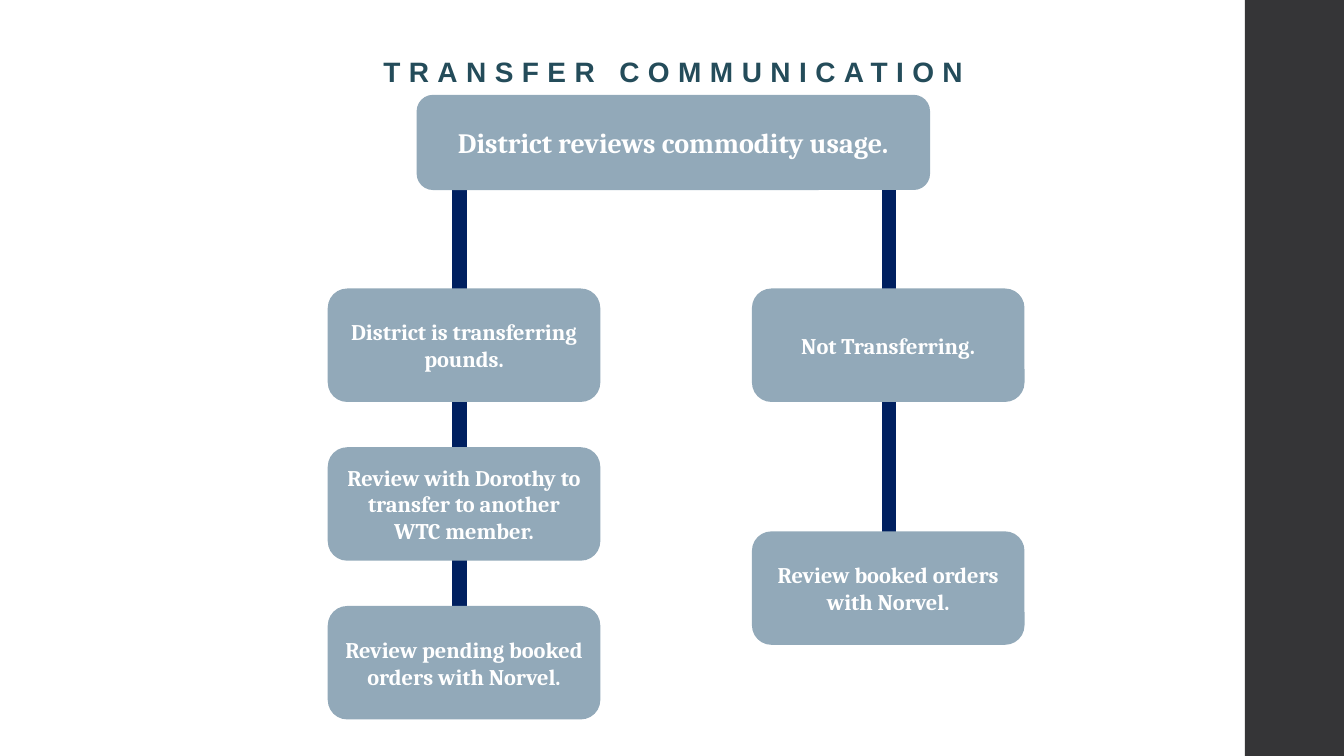
from pptx import Presentation
from pptx.dml.color import RGBColor
from pptx.enum.shapes import MSO_SHAPE
from pptx.enum.text import MSO_ANCHOR, PP_ALIGN
from pptx.util import Cm, Pt

RECTANGLE, ROUNDED = MSO_SHAPE.RECTANGLE, MSO_SHAPE.ROUNDED_RECTANGLE
MIDDLE, BOTTOM = MSO_ANCHOR.MIDDLE, MSO_ANCHOR.BOTTOM
CENTER = PP_ALIGN.CENTER
TITLE_ONLY = 5

COLORS = {
    "sidebar": "353537",
    "bar": "002060",
    "box": "92A9B9",
    "title": "244C5A",
    "label": "FFFFFF",
}
TITLE_FONT = {"name": "Arial", "size": Pt(20), "bold": True}
LABEL_FONT = {"name": "Cambria", "bold": True}

SLIDE_WIDTH, SLIDE_HEIGHT = 33.87, 19.05
BOX_WIDTH, BOX_HEIGHT = 6.83, 2.82
LEFT_COLUMN, RIGHT_COLUMN = 8.28, 18.97
FIRST_ROW, ROW_STEP = 7.29, 4.0

TRANSFER_STEPS = [
    "District is transferring pounds.",
    "Review with Dorothy to transfer to another WTC member.",
    "Review pending booked orders with Norvel.",
]


class FlowPage:
    """Holds the flowchart style and the slide being drawn."""

    def __init__(self, deck):
        self.page = deck.slides.add_slide(deck.slide_layouts[TITLE_ONLY])

    def add_text(self, shape, text, color, font, anchor):
        frame = shape.text_frame
        frame.word_wrap = True
        frame.vertical_anchor = anchor
        para = frame.paragraphs[0]
        para.alignment = CENTER
        span = para.add_run()
        span.text = text
        for key, value in font.items():
            setattr(span.font, key, value)
        span.font.color.rgb = RGBColor.from_string(COLORS[color])
        return para, span

    def title(self, text, left, top, width, height):
        shape = self.page.shapes.title
        place = {"left": left, "top": top, "width": width, "height": height}
        for key, value in place.items():
            setattr(shape, key, Cm(value))
        para, span = self.add_text(shape, text, "title", TITLE_FONT, BOTTOM)
        para.line_spacing = 0.9
        span._r.get_or_add_rPr().set("spc", "600")

    def block(self, kind, color, left, top, width, height, outlined=True):
        shape = self.page.shapes.add_shape(
            kind, Cm(left), Cm(top), Cm(width), Cm(height))
        shape.shadow.inherit = False
        shape.fill.solid()
        shape.fill.fore_color.rgb = RGBColor.from_string(COLORS[color])
        if outlined:
            shape.line.color.rgb = RGBColor.from_string(COLORS[color])
            shape.line.width = Pt(1.1)
        else:
            shape.line.fill.background()
        return shape

    def bar(self, left, top, width, height):
        self.block(RECTANGLE, "bar", left, top, width, height)

    def box(self, text, left, top, width=BOX_WIDTH, height=BOX_HEIGHT, size=16):
        shape = self.block(ROUNDED, "box", left, top, width, height)
        font = {**LABEL_FONT, "size": Pt(size)}
        self.add_text(shape, text, "label", font, MIDDLE)


def main():
    deck = Presentation()
    deck.slide_width, deck.slide_height = Cm(SLIDE_WIDTH), Cm(SLIDE_HEIGHT)
    flow = FlowPage(deck)

    flow.block(RECTANGLE, "sidebar", 31.37, 0, 2.54, SLIDE_HEIGHT, outlined=False)
    flow.title("TRANSFER COMMUNICATION", 2.36, -0.89, 29.21, 3.25)
    flow.bar(11.42, 4.79, 0.33, 10.97)
    flow.bar(22.25, 4.5, 0.3, 9.6)

    flow.box("District reviews commodity usage.", 10.52, 2.41, 12.9, 2.36, size=20)
    for row, step in enumerate(TRANSFER_STEPS):
        flow.box(step, LEFT_COLUMN, FIRST_ROW + row * ROW_STEP)
    flow.box("Not Transferring.", RIGHT_COLUMN, FIRST_ROW)
    flow.box("Review booked orders with Norvel.", RIGHT_COLUMN, 13.41)

    deck.save("out.pptx")


if __name__ == "__main__":
    main()
